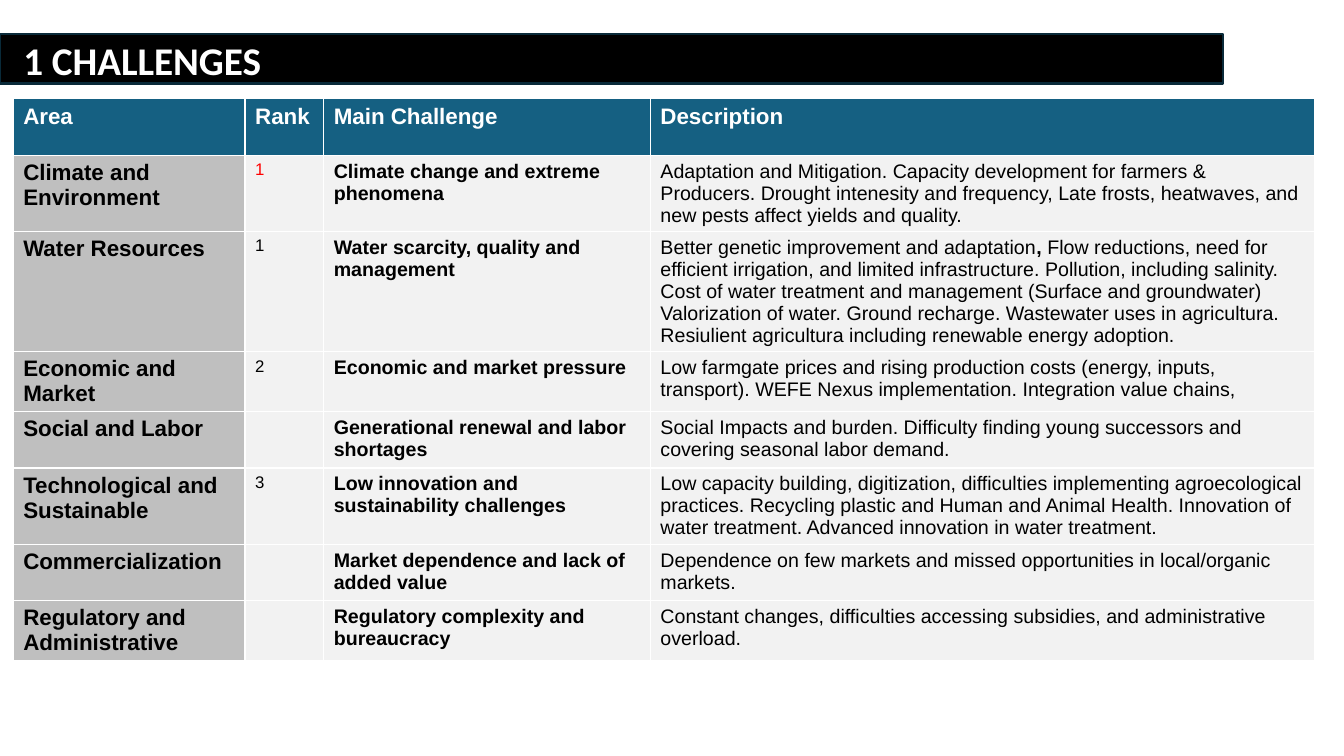
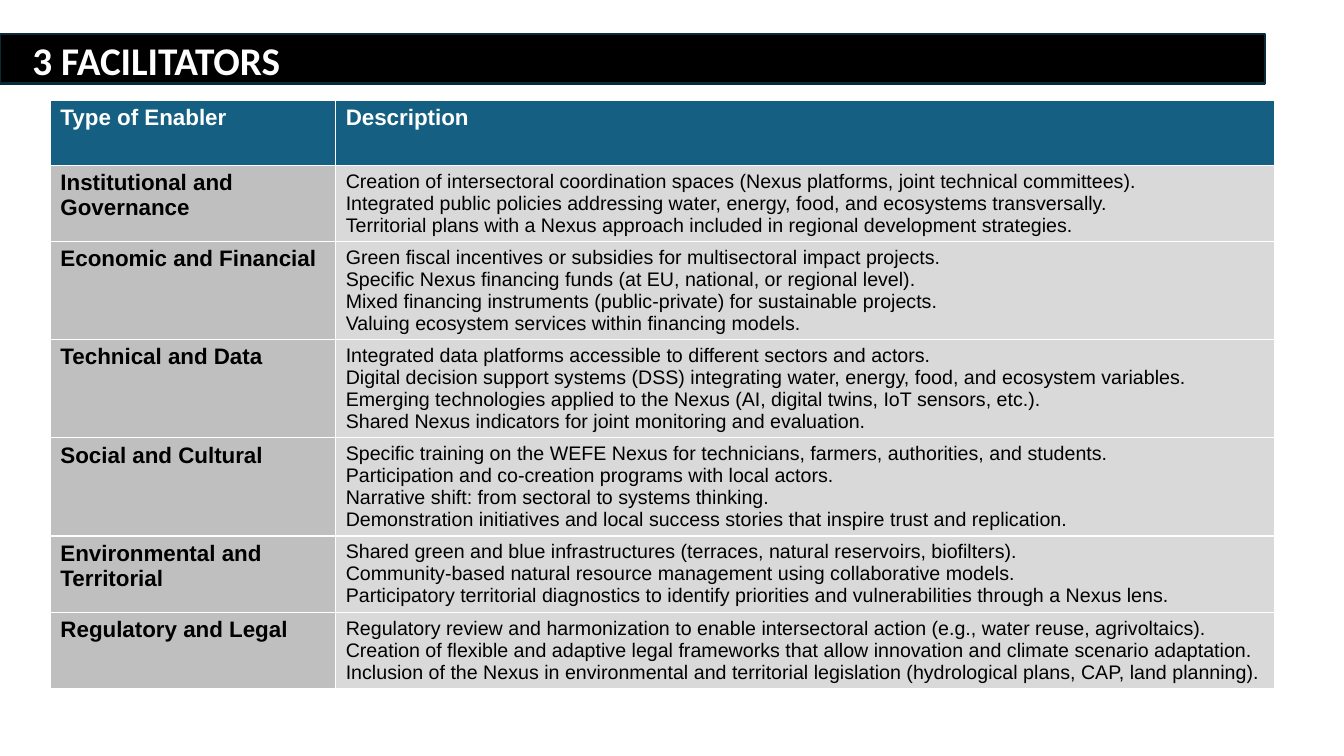
from dataclasses import dataclass

from pptx import Presentation
from pptx.dml.color import RGBColor
from pptx.enum.shapes import MSO_SHAPE
from pptx.enum.text import MSO_ANCHOR, MSO_AUTO_SIZE, PP_ALIGN
from pptx.util import Inches, Pt

RECT = MSO_SHAPE.RECTANGLE
TOP = MSO_ANCHOR.TOP
LEFT = PP_ALIGN.LEFT
FIXED = MSO_AUTO_SIZE.NONE
WIDE, HIGH = Inches(13.33), Inches(7.5)


@dataclass(frozen=True)
class Theme:
    """Colours, fonts and type sizes of the deck."""

    white: str = "FFFFFF"
    black: str = "000000"
    red: str = "FF0000"
    edge: str = "092A39"
    head: str = "156082"
    label: str = "BFBFBF"
    pale: str = "F2F2F2"
    grey: str = "D9D9D9"
    title_face: str = "Calibri"
    face: str = "Arial"
    title: int = 28
    large: int = 16
    body: int = 14
    small: int = 12


@dataclass(frozen=True)
class Look:
    """Type size, weight and fill of one kind of cell."""

    size: int
    bold: bool
    fill: str
    ink: str


T = Theme()
HEAD = Look(T.large, True, T.head, T.white)
AREA = Look(T.large, True, T.label, T.black)
RANK = Look(T.small, False, T.pale, T.black)
MAIN = Look(T.body, True, T.pale, T.black)
NOTE = Look(T.body, False, T.pale, T.black)
LIST = Look(T.body, False, T.grey, T.black)

CHALLENGES = [
    ["Area", "Rank", "Main Challenge", "Description"],
    ["Climate and Environment", "1", "Climate change and extreme phenomena",
     "Adaptation and Mitigation. Capacity development for farmers & Producers. "
     "Drought intenesity and frequency, Late frosts, heatwaves, and new pests "
     "affect yields and quality."],
    ["Water Resources", "1", "Water scarcity, quality and management",
     "Better genetic improvement and adaptation|, |Flow reductions, need for "
     "efficient irrigation, and limited infrastructure. Pollution, including "
     "salinity. Cost of water treatment and management (Surface and groundwater) "
     "Valorization of water. Ground recharge. Wastewater uses in agricultura. "
     "Resiulient agricultura including renewable energy adoption."],
    ["Economic and Market", "2", "Economic and market pressure",
     "Low farmgate prices and rising production costs (energy, inputs, "
     "transport). WEFE Nexus implementation. Integration value chains,"],
    ["Social and Labor", "", "Generational renewal and labor shortages",
     "Social Impacts and burden. Difficulty finding young successors and "
     "covering seasonal labor demand."],
    ["Technological and Sustainable", "3",
     "Low innovation and sustainability challenges",
     "Low capacity building, digitization, difficulties implementing "
     "agroecological practices. Recycling plastic and Human and Animal Health. "
     "Innovation of water treatment. Advanced innovation in water treatment."],
    ["Commercialization", "", "Market dependence and lack of added value",
     "Dependence on few markets and missed opportunities in local/organic "
     "markets."],
    ["Regulatory and Administrative", "", "Regulatory complexity and bureaucracy",
     "Constant changes, difficulties accessing subsidies, and administrative "
     "overload."],
]

ENABLERS = [
    ["Type of Enabler", "Description"],
    ["Institutional and Governance",
     "Creation of intersectoral coordination spaces (Nexus platforms, joint "
     "technical committees).\n"
     "Integrated public policies addressing water, energy, food, and ecosystems "
     "transversally.\n"
     "Territorial plans with a Nexus approach included in regional development "
     "strategies."],
    ["Economic and Financial",
     "Green fiscal incentives or subsidies for multisectoral impact projects.\n"
     "Specific Nexus financing funds (at EU, national, or regional level).\n"
     "Mixed financing instruments (public-private) for sustainable projects.\n"
     "Valuing ecosystem services within financing models."],
    ["Technical and Data",
     "Integrated data platforms accessible to different sectors and actors.\n"
     "Digital decision support systems (DSS) integrating water, energy, food, "
     "and ecosystem variables.\n"
     "Emerging technologies applied to the Nexus (AI, digital twins, IoT "
     "sensors, etc.).\n"
     "Shared Nexus indicators for joint monitoring and evaluation."],
    ["Social and Cultural",
     "Specific training on the WEFE Nexus for technicians, farmers, "
     "authorities, and students.\n"
     "Participation and co-creation programs with local actors.\n"
     "Narrative shift: from sectoral to systems thinking.\n"
     "Demonstration initiatives and local success stories that inspire trust "
     "and replication."],
    ["Environmental and Territorial",
     "Shared green and blue infrastructures (terraces, natural reservoirs, "
     "biofilters).\n"
     "Community-based natural resource management using collaborative models.\n"
     "Participatory territorial diagnostics to identify priorities and "
     "vulnerabilities through a Nexus lens."],
    ["Regulatory and Legal",
     "Regulatory review and harmonization to enable intersectoral action (e.g., "
     "water reuse, agrivoltaics).\n"
     "Creation of flexible and adaptive legal frameworks that allow innovation "
     "and climate scenario adaptation.\n"
     "Inclusion of the Nexus in environmental and territorial legislation "
     "(hydrological plans, CAP, land planning)."],
]


def place(x, y, wide, high):
    """Turn percent shares of the slide into a box."""
    return (int(WIDE * x / 100), int(HIGH * y / 100),
            int(WIDE * wide / 100), int(HIGH * high / 100))


def tint(fill, hue):
    """Fill with one solid colour."""
    fill.solid()
    fill.fore_color.rgb = RGBColor.from_string(hue)


def style(para, face, size, bold, ink):
    """Set the font of a whole paragraph."""
    font = para.font
    font.name, font.size, font.bold = face, Pt(size), bold
    font.color.rgb = RGBColor.from_string(ink)


def banner(slide, text, wide, inset):
    """Draw the title band and set the title on it."""
    title = slide.shapes.title
    band = slide.shapes.add_shape(RECT, *place(0, 4.53, wide, 6.53))
    band.shadow.inherit = False
    tint(band.fill, T.black)
    tint(band.line.fill, T.edge)
    band.line.width = Pt(1.5)
    title.element.addprevious(band.element)
    title.left, title.top, title.width, title.height = place(0.98, 4.13, 75.24, 9.2)
    frame = title.text_frame
    frame.text = text
    frame.auto_size, frame.vertical_anchor = FIXED, TOP
    frame.margin_left = Inches(inset)
    para = frame.paragraphs[0]
    para.alignment = LEFT
    style(para, T.title_face, T.title, True, T.white)


def write(cell, text, look):
    """Fill a cell; text between bars is bold."""
    tint(cell.fill, look.fill)
    frame = cell.text_frame
    for row, line in enumerate(text.split("\n")):
        para = frame.add_paragraph() if row else frame.paragraphs[0]
        for part, piece in enumerate(line.split("|")):
            if piece:
                run = para.add_run()
                run.text = piece
                if part % 2:
                    run.font.bold = True
        style(para, T.face, look.size, look.bold, look.ink)


def grid(slide, rows, looks, parts, x, y, wide, step):
    """Lay out a table with columns in the given parts."""
    box = place(x, y, wide, step * len(rows))
    table = slide.shapes.add_table(len(rows), len(parts), *box).table
    table.horz_banding = False
    for col, part in zip(table.columns, parts):
        col.width = int(box[2] * part / sum(parts))
    for r, row in enumerate(rows):
        for c, text in enumerate(row):
            write(table.cell(r, c), text, looks[c] if r else HEAD)
    return table


def challenges(slide):
    """Build the slide of ranked challenges."""
    banner(slide, "1 CHALLENGES", 91, 0.1)
    table = grid(slide, CHALLENGES, [AREA, RANK, MAIN, NOTE],
                 [2.3, 0.78, 3.24, 6.59], 0.98, 13.07, 96.85, 7.47)
    first = table.cell(1, 1).text_frame.paragraphs[0]
    first.font.color.rgb = RGBColor.from_string(T.red)


def enablers(slide):
    """Build the slide of facilitators."""
    banner(slide, "3 FACILITATORS", 94.15, 0.19)
    grid(slide, ENABLERS, [AREA, LIST], [2.83, 9.31], 3.75, 13.33, 91.07, 8.53)


def main():
    """Build and save the deck."""
    deck = Presentation()
    deck.slide_width, deck.slide_height = WIDE, HIGH
    for build in (challenges, enablers):
        build(deck.slides.add_slide(deck.slide_layouts[5]))
    deck.save("out.pptx")


if __name__ == "__main__":
    main()
